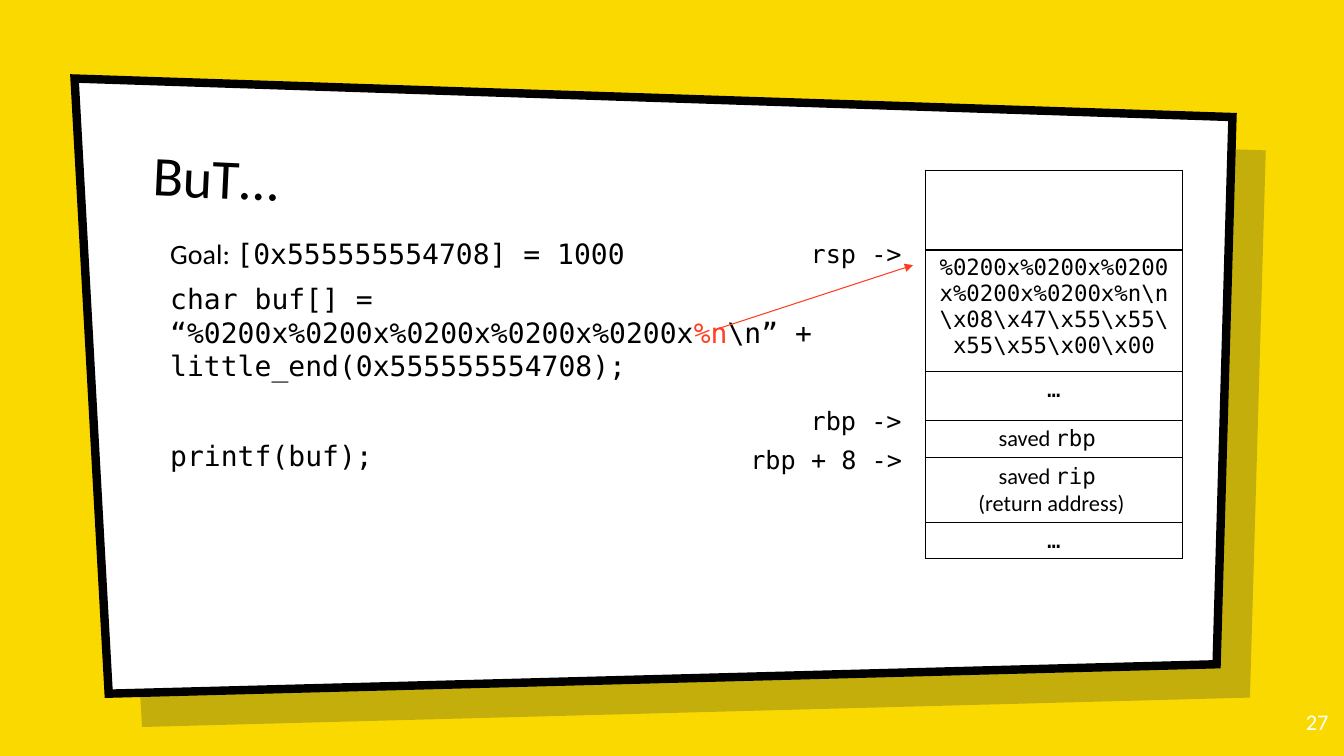
from lxml.etree import SubElement
from pptx import Presentation
from pptx.dml.color import RGBColor
from pptx.enum.shapes import MSO_CONNECTOR
from pptx.enum.text import MSO_ANCHOR, MSO_AUTO_SIZE, PP_ALIGN
from pptx.oxml.ns import qn
from pptx.util import Cm, Pt

COLORS = {"yellow": "FAD900", "shade": "001936", "white": "FFFFFF",
          "black": "000000", "red": "FF4026", "arrow": "FF3B20"}
SANS, MONO = "Calibri", "DejaVu Sans Mono"

TITLE = [[("BuT…", SANS)]]
CODE = [
    [("Goal: ", SANS), ("[0x555555554708] = 1000", MONO)],
    [("char buf[] = “%0200x%0200x%0200x%0200x%0200x", MONO), ("%n", MONO, "red"),
     ("\\n” + little_end(0x555555554708);", MONO)],
    [("printf(buf);", MONO)],
]
CODE_GAPS = [0, 8, 40]
PAGE_NUMBER = [[("27", SANS, "white")]]
STACK = [
    (2.01, []),
    (3.07, [[("%0200x%0200x%0200x%0200x%0200x%n\\n \\x08\\x47\\x55\\x55\\x55\\x55\\x00\\x00", MONO)]]),
    (1.22, [[("…", MONO)]]),
    (0.91, [[("saved ", SANS), ("rbp ", MONO)]]),
    (1.6, [[("saved ", SANS), ("rip ", MONO)], [("(return address) ", SANS)]]),
    (0.89, [[("…", MONO)]]),
]
POINTERS = [("rbp ->", 10.08), ("rsp ->", 5.87), ("rbp + 8 ->", 11.07)]

PANEL = [(1.88, 1.98), (31.06, 2.95), (30.66, 16.74), (2.74, 17.48)]
SHADE_OFFSET = 0.84
STACK_LEFT, STACK_TOP, STACK_WIDTH = 23.32, 4.29, 6.48
POINTER_RIGHT, POINTER_HEIGHT = 22.99, 1.02
CHARACTER_WIDTH, POINTER_PADDING = 0.38, 0.53
ARROW = (18.01, 8.31, 23.01, 6.68)


def color(name):
    return RGBColor.from_string(COLORS[name])


def place(shape, left, top, width, height):
    shape.left, shape.top = Cm(left), Cm(top)
    shape.width, shape.height = Cm(width), Cm(height)


def write(frame, text, size, align=PP_ALIGN.LEFT, gaps=None, indent=None):
    for index, runs in enumerate(text):
        paragraph = frame.paragraphs[0] if index == 0 else frame.add_paragraph()
        if indent is not None:
            properties = paragraph._p.get_or_add_pPr()
            properties.set("marL", str(Cm(indent)))
            properties.set("indent", "0")
            SubElement(properties, qn("a:buNone"))
        paragraph.alignment = align
        paragraph.space_before = Pt(gaps[index] if gaps else 0)
        for words, font, *tint in runs:
            run = paragraph.add_run()
            run.text = words
            run.font.name, run.font.size = font, Pt(size)
            run.font.color.rgb = color(tint[0] if tint else "black")


def prepare(frame, anchor=MSO_ANCHOR.TOP, inset=0.25):
    frame.auto_size = MSO_AUTO_SIZE.NONE
    frame.word_wrap = True
    frame.vertical_anchor = anchor
    frame.margin_left = frame.margin_right = Cm(inset)
    frame.margin_top = frame.margin_bottom = Cm(inset)


def add_panel(slide, offset, fill):
    points = [(Cm(x + offset), Cm(y + offset)) for x, y in PANEL]
    builder = slide.shapes.build_freeform(*points[0])
    builder.add_line_segments(points[1:], close=True)
    panel = builder.convert_to_shape()
    panel.shadow.inherit = False
    panel.fill.solid()
    panel.fill.fore_color.rgb = color(fill)
    slide.shapes.title.element.addprevious(panel.element)
    return panel


def add_stack(slide):
    height = sum(row_height for row_height, _ in STACK)
    table = slide.shapes.add_table(len(STACK), 1, Cm(STACK_LEFT), Cm(STACK_TOP),
                                   Cm(STACK_WIDTH), Cm(height)).table
    table.first_row = table.horz_banding = False
    for row, (row_height, text) in zip(table.rows, STACK):
        row.height = Cm(row_height)
        cell = row.cells[0]
        properties = cell._tc.get_or_add_tcPr()
        for side in ("lnL", "lnR", "lnT", "lnB"):
            border = SubElement(properties, qn(f"a:{side}"), w=str(Pt(1)))
            fill = SubElement(border, qn("a:solidFill"))
            SubElement(fill, qn("a:srgbClr"), val=COLORS["black"])
        cell.fill.background()
        write(cell.text_frame, text, 16, align=PP_ALIGN.CENTER)


def main():
    presentation = Presentation()
    presentation.slide_width, presentation.slide_height = Cm(33.87), Cm(19.05)
    slide = presentation.slides.add_slide(presentation.slide_layouts[1])
    slide.background.fill.solid()
    slide.background.fill.fore_color.rgb = color("yellow")

    shade = add_panel(slide, SHADE_OFFSET, "shade")
    shade.line.fill.background()
    shade_color = shade.element.spPr.find(qn("a:solidFill"))[0]
    SubElement(shade_color, qn("a:alpha"), val="22000")
    panel = add_panel(slide, 0, "white")
    panel.line.color.rgb = color("black")
    panel.line.width = Pt(6)
    SubElement(panel.element.spPr.find(qn("a:ln")), qn("a:miter"), lim="800000")

    title = slide.shapes.title
    place(title, 3.61, 3.25, 26.04, 2.82)
    title.rotation = 2.7
    prepare(title.text_frame, anchor=MSO_ANCHOR.BOTTOM)
    write(title.text_frame, TITLE, 40)

    body = slide.placeholders[1]
    place(body, 3.89, 5.72, 17.15, 10.69)
    prepare(body.text_frame)
    write(body.text_frame, CODE, 20, gaps=CODE_GAPS, indent=0.15)

    number = slide.shapes.add_textbox(Cm(31.7), Cm(17.6), Cm(2.03), Cm(1.45))
    prepare(number.text_frame)
    write(number.text_frame, PAGE_NUMBER, 16, align=PP_ALIGN.RIGHT)

    add_stack(slide)

    for words, top in POINTERS:
        width = CHARACTER_WIDTH * len(words) + POINTER_PADDING
        pointer = slide.shapes.add_textbox(Cm(POINTER_RIGHT - width), Cm(top),
                                           Cm(width), Cm(POINTER_HEIGHT))
        pointer.text_frame.word_wrap = False
        write(pointer.text_frame, [[(words, MONO)]], 18)

    arrow = slide.shapes.add_connector(MSO_CONNECTOR.STRAIGHT, *map(Cm, ARROW))
    arrow.line.color.rgb = color("arrow")
    arrow.line.width = Pt(0.75)
    SubElement(arrow.element.spPr.find(qn("a:ln")), qn("a:tailEnd"), type="triangle")
    SubElement(arrow.element.spPr, qn("a:effectLst"))

    presentation.save("out.pptx")


if __name__ == "__main__":
    main()
